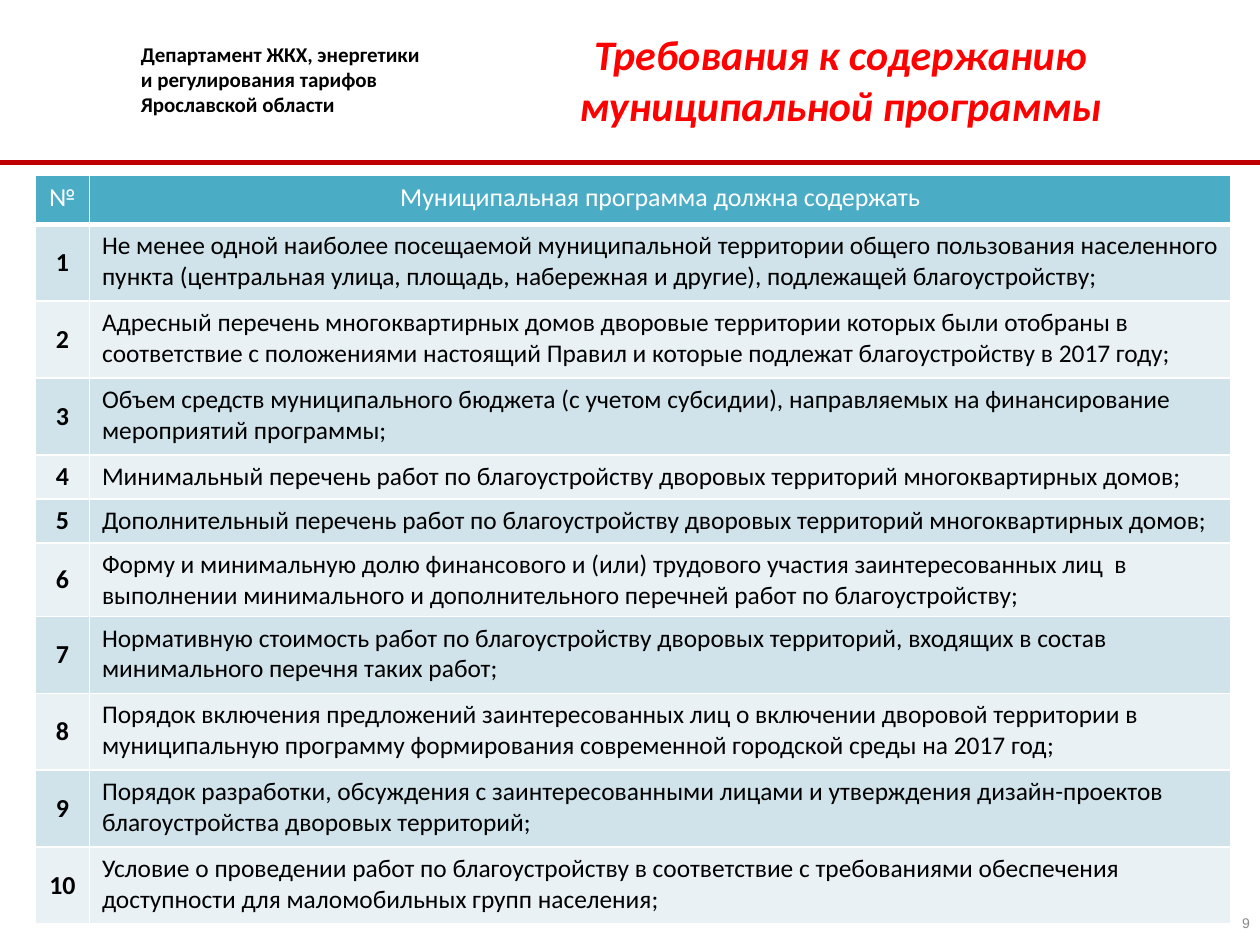
from lxml import etree
from pptx import Presentation
from pptx.dml.color import RGBColor
from pptx.enum.shapes import MSO_CONNECTOR, MSO_SHAPE
from pptx.enum.text import MSO_ANCHOR, MSO_AUTO_SIZE, PP_ALIGN
from pptx.oxml.ns import qn
from pptx.util import Inches, Pt

LEFT, CENTER, RIGHT = PP_ALIGN.LEFT, PP_ALIGN.CENTER, PP_ALIGN.RIGHT
TOP, MIDDLE = MSO_ANCHOR.TOP, MSO_ANCHOR.MIDDLE
NO_AUTOFIT = MSO_AUTO_SIZE.NONE
RECTANGLE, STRAIGHT = MSO_SHAPE.RECTANGLE, MSO_CONNECTOR.STRAIGHT

WHITE = RGBColor(0xFF, 0xFF, 0xFF)
BLACK = RGBColor(0, 0, 0)
RED = RGBColor(0xFF, 0, 0)
DARK_RED = RGBColor(0xC0, 0, 0)
GRAY = RGBColor(0x89, 0x89, 0x89)
TEAL = RGBColor(0x4B, 0xAC, 0xC6)
BANDS = (RGBColor(0xD0, 0xE3, 0xEA), RGBColor(0xE9, 0xF1, 0xF5))

HEADINGS = ("№", "Муниципальная программа должна содержать")
REQUIREMENTS = (
    (0.61, "Не менее одной наиболее посещаемой муниципальной территории общего пользования населенного "
           "пункта (центральная улица, площадь, набережная и другие), подлежащей благоустройству;"),
    (0.61, "Адресный перечень многоквартирных домов дворовые территории которых были отобраны в "
           "соответствие с положениями настоящий Правил и которые подлежат благоустройству в 2017 году;"),
    (0.61, "Объем средств муниципального бюджета (с учетом субсидии), направляемых на финансирование "
           "мероприятий программы;"),
    (0.35, "Минимальный перечень работ по благоустройству дворовых территорий многоквартирных домов;"),
    (0.35, "Дополнительный перечень работ по благоустройству дворовых территорий многоквартирных домов;"),
    (0.58, "Форму и минимальную долю финансового и (или) трудового участия заинтересованных лиц  в "
           "выполнении минимального и дополнительного перечней работ по благоустройству;"),
    (0.61, "Нормативную стоимость работ по благоустройству дворовых территорий, входящих в состав "
           "минимального перечня таких работ;"),
    (0.61, "Порядок включения предложений заинтересованных лиц о включении дворовой территории в "
           "муниципальную программу формирования современной городской среды на 2017 год;"),
    (0.61, "Порядок разработки, обсуждения с заинтересованными лицами и утверждения дизайн-проектов "
           "благоустройства дворовых территорий;"),
    (0.61, "Условие о проведении работ по благоустройству в соответствие с требованиями обеспечения "
           "доступности для маломобильных групп населения;"),
)


def write(text_frame, text, size, color, align=LEFT, bold=False, italic=False, font="Calibri"):
    text_frame.text = text
    for paragraph in text_frame.paragraphs:
        paragraph.alignment = align
        paragraph.font.name = font
        paragraph.font.size = Pt(size)
        paragraph.font.bold = bold
        paragraph.font.italic = italic
        paragraph.font.color.rgb = color


def add_department(slide, left, top, width, height):
    shape = slide.shapes.add_shape(RECTANGLE, left, top, width, height)
    shape.shadow.inherit = False
    shape.fill.solid()
    shape.fill.fore_color.rgb = WHITE
    shape.line.fill.background()
    shape.text_frame.word_wrap = True
    shape.text_frame.vertical_anchor = TOP
    write(shape.text_frame, "Департамент ЖКХ, энергетики и регулирования тарифов\nЯрославской области",
          12, BLACK, bold=True)


def add_rule(slide, left, top, width):
    line = slide.shapes.add_connector(STRAIGHT, left, top, left + width, top)
    line.line.color.rgb = DARK_RED
    line.line.width = Pt(2.5)
    etree.SubElement(line._element.spPr, qn("a:effectLst"))


def place_title(slide, left, top, width, height):
    title = slide.shapes.title
    title.left, title.top, title.width, title.height = left, top, width, height
    title.text_frame.auto_size = NO_AUTOFIT
    title.text_frame.word_wrap = True
    title.text_frame.vertical_anchor = TOP
    write(title.text_frame, "Требования к содержанию муниципальной программы",
          24, RED, CENTER, bold=True, italic=True)


def add_page_number(slide, left, top, width, height):
    text_frame = slide.shapes.add_textbox(left, top, width, height).text_frame
    text_frame.word_wrap = True
    text_frame.vertical_anchor = MIDDLE
    text_frame.margin_left = text_frame.margin_right = Inches(0.04)
    text_frame.margin_top = text_frame.margin_bottom = Inches(0.04)
    write(text_frame, "9", 8, GRAY, RIGHT, font="Arial")


def format_cell(cell, fill, bottom_width=1):
    properties = cell._tc.get_or_add_tcPr()
    for side, width in (("L", 1), ("R", 1), ("T", 1), ("B", bottom_width)):
        border = etree.SubElement(properties, qn(f"a:ln{side}"), w=str(Pt(width)))
        solid = etree.SubElement(border, qn("a:solidFill"))
        etree.SubElement(solid, qn("a:srgbClr"), val=str(WHITE))
    cell.fill.solid()
    cell.fill.fore_color.rgb = fill


def add_requirements(slide, left, top, width):
    heights = [Inches(0.39)] + [Inches(height) for height, _ in REQUIREMENTS]
    table = slide.shapes.add_table(len(heights), 2, left, top, width, sum(heights)).table
    number_width = Inches(0.43)
    table.columns[0].width = number_width
    table.columns[1].width = width - number_width
    for row, height in zip(table.rows, heights):
        row.height = height
    for cell, heading in zip(table.rows[0].cells, HEADINGS):
        format_cell(cell, TEAL, bottom_width=3)
        write(cell.text_frame, heading, 14.8, WHITE, CENTER)
    for number, (_, requirement) in enumerate(REQUIREMENTS, start=1):
        number_cell, text_cell = table.rows[number].cells
        for cell in (number_cell, text_cell):
            format_cell(cell, BANDS[(number - 1) % 2])
        number_cell.vertical_anchor = MIDDLE
        write(number_cell.text_frame, str(number), 14.8, BLACK, CENTER, bold=True)
        write(text_cell.text_frame, requirement, 14.5, BLACK)


def main():
    presentation = Presentation()
    presentation.slide_width, presentation.slide_height = Inches(10), Inches(7.5)
    slide = presentation.slides.add_slide(presentation.slide_layouts[5])
    add_department(slide, Inches(1.02), Inches(0.28), Inches(2.44), Inches(0.71))
    add_rule(slide, Inches(-0.02), Inches(1.29), Inches(10.04))
    add_page_number(slide, Inches(9.56), Inches(7.22), Inches(0.4), Inches(0.21))
    place_title(slide, Inches(3.47), Inches(0.18), Inches(6.4), Inches(0.91))
    add_requirements(slide, Inches(0.28), Inches(1.39), Inches(9.49))
    presentation.save("out.pptx")


if __name__ == "__main__":
    main()
